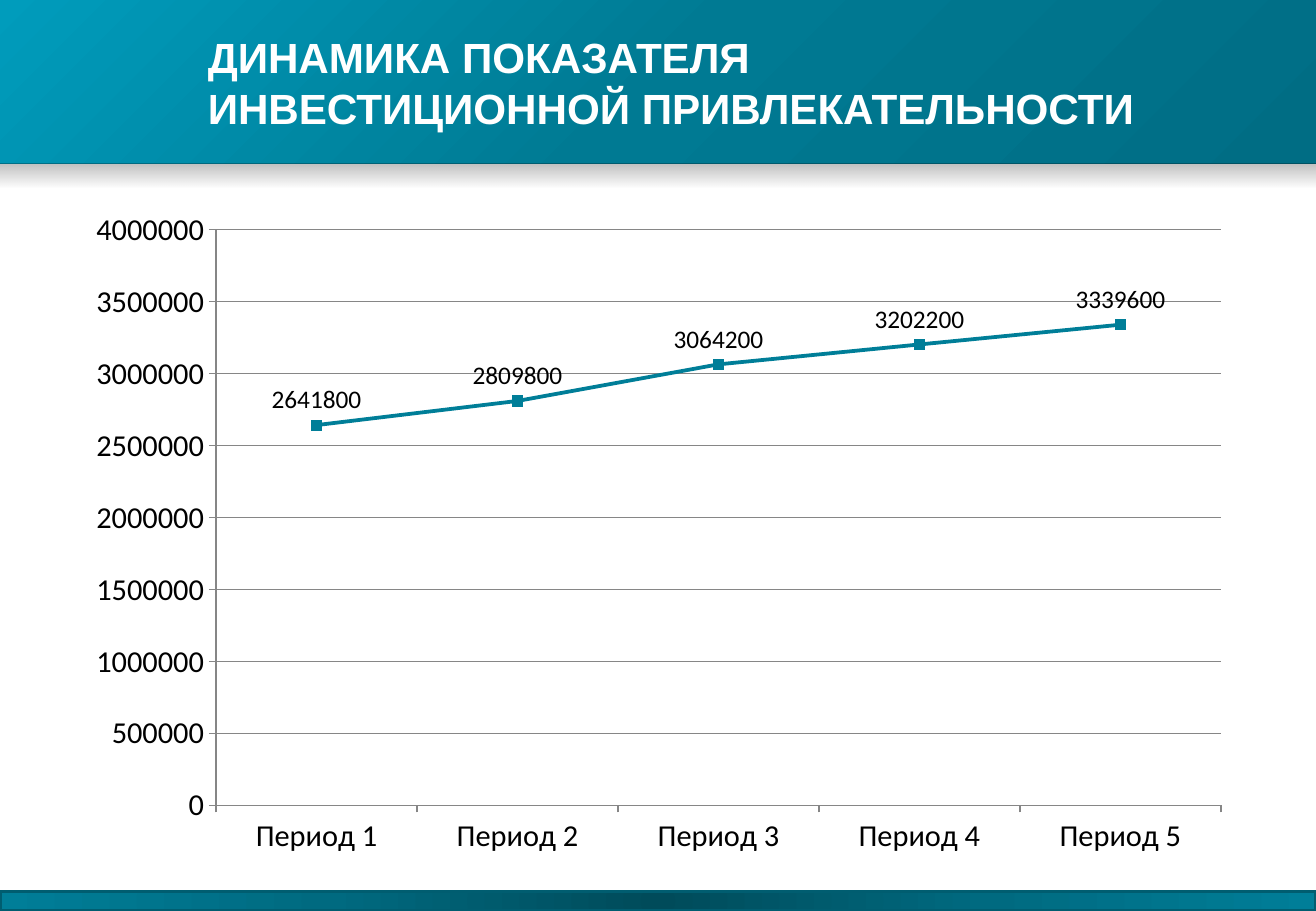
import lxml.etree
import pptx
import pptx.chart.data
import pptx.dml.color
import pptx.enum.chart
import pptx.enum.shapes
import pptx.enum.text
import pptx.oxml
import pptx.oxml.ns
import pptx.util

Inches = pptx.util.Inches
Pt = pptx.util.Pt


def paint(color):
    return pptx.dml.color.RGBColor.from_string(color)


def add_band(slide, top, height, stops, course):
    """Add a full-width gradient band; a stop is (percent, color, alpha percent)."""
    band = slide.shapes.add_shape(
        pptx.enum.shapes.MSO_SHAPE.RECTANGLE, 0, Inches(top), Inches(10.83), Inches(height))
    band.shadow.inherit = False
    band.line.fill.background()
    band.fill.background()
    marks = "".join(
        f'<a:gs pos="{place * 1000}"><a:srgbClr val="{color}">'
        f'<a:alpha val="{alpha * 1000}"/></a:srgbClr></a:gs>'
        for place, color, alpha in stops)
    grad = pptx.oxml.parse_xml(
        f'<a:gradFill {pptx.oxml.ns.nsdecls("a")} rotWithShape="1">'
        f'<a:gsLst>{marks}</a:gsLst>{course}</a:gradFill>')
    props = band._element.spPr
    props.replace(props.find(pptx.oxml.ns.qn("a:noFill")), grad)
    return band


deck = pptx.Presentation()
deck.slide_width = Inches(10.83)
deck.slide_height = Inches(7.5)
slide = deck.slides.add_slide(deck.slide_layouts[5])

# Header, its soft shade and the footer
add_band(slide, 0, 1.35,
         [(0, "006D84", 100), (50, "007A93", 100), (100, "009CBC", 100)],
         '<a:lin ang="13500000" scaled="0"/>')
add_band(slide, 1.35, 0.19, [(0, "000000", 26), (100, "000000", 0)],
         '<a:lin ang="5400000" scaled="0"/>')
foot = add_band(slide, 7.34, 0.16,
                [(0, "004B5A", 100), (50, "006A80", 100), (100, "007E98", 100)],
                '<a:path path="circle"><a:fillToRect l="50000" t="50000" '
                'r="50000" b="50000"/></a:path>')
foot.line.color.rgb = paint("005D70")
foot.line.width = Pt(2)

# Title, raised above the header
title = slide.shapes.title
title._element.getparent().append(title._element)
title.left, title.top = Inches(1.71), Inches(0.21)
title.width, title.height = Inches(7.75), Inches(0.51)
frame = title.text_frame
frame.text = "ДИНАМИКА ПОКАЗАТЕЛЯ ИНВЕСТИЦИОННОЙ ПРИВЛЕКАТЕЛЬНОСТИ"
frame.word_wrap = True
frame.auto_size = pptx.enum.text.MSO_AUTO_SIZE.NONE
frame.vertical_anchor = pptx.enum.text.MSO_ANCHOR.TOP
frame.margin_left = frame.margin_right = 0
frame.margin_top = frame.margin_bottom = Inches(0.05)
line = frame.paragraphs[0]
line.alignment = pptx.enum.text.PP_ALIGN.LEFT
line.space_before = Pt(0)
font = line.runs[0].font
font.name = "Arial"
font.size = Pt(25)
font.bold = True
font.color.rgb = paint("FFFFFF")

# Line chart
data = pptx.chart.data.CategoryChartData()
data.categories = [f"Период {count}" for count in range(1, 6)]
data.add_series("Series 1", [2641800, 2809800, 3064200, 3202200, 3339600])
chart = slide.shapes.add_chart(
    pptx.enum.chart.XL_CHART_TYPE.LINE_MARKERS,
    Inches(0.6), Inches(1.63), Inches(9.64), Inches(5.51), data).chart
chart.has_legend = False
chart.has_title = False
chart.font.name = "Calibri"
chart.font.size = Pt(18)
chart.font.color.rgb = paint("000000")

scale = chart.value_axis
scale.minimum_scale = 0
scale.maximum_scale = 4000000
scale.major_unit = 500000
scale.has_major_gridlines = True
for axis in (scale, chart.category_axis):
    axis.major_tick_mark = pptx.enum.chart.XL_TICK_MARK.OUTSIDE
for part in (scale, chart.category_axis, scale.major_gridlines):
    part.format.line.color.rgb = paint("868686")
    part.format.line.width = Pt(0.75)

plot = chart.plots[0]
plot.vary_by_categories = False
series = plot.series[0]
series.smooth = False
series.format.line.color.rgb = paint("007E98")
series.format.line.width = Pt(2.25)
series.marker.style = pptx.enum.chart.XL_MARKER_STYLE.SQUARE
series.marker.size = 6
series.marker.format.fill.solid()
series.marker.format.fill.fore_color.rgb = paint("007E98")
series.marker.format.line.color.rgb = paint("007E98")

labels = series.data_labels
labels.show_value = True
labels.position = pptx.enum.chart.XL_LABEL_POSITION.ABOVE
labels.font.name = "Calibri"
labels.font.size = Pt(15)
labels.font.color.rgb = paint("000000")

deck.save("out.pptx")
